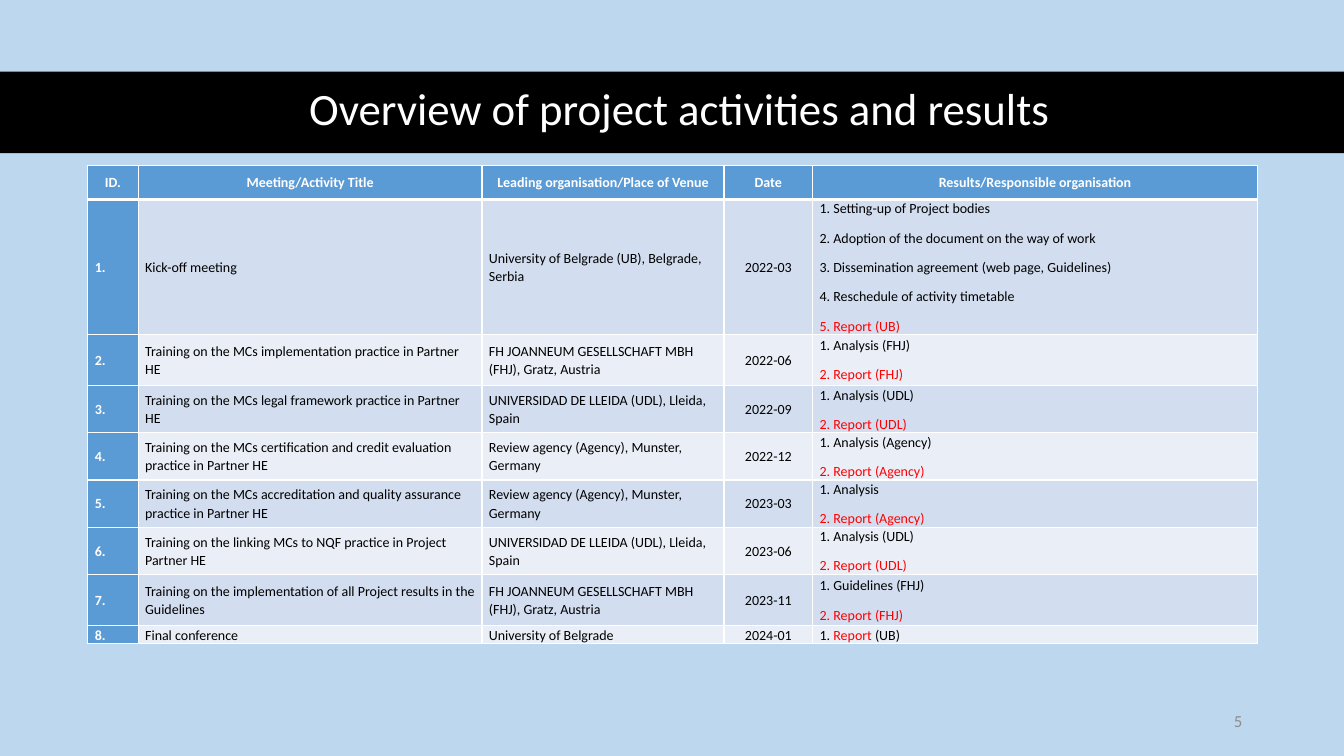
from dataclasses import dataclass
from typing import NamedTuple

from lxml.etree import SubElement
from pptx import Presentation
from pptx.dml.color import RGBColor
from pptx.enum.shapes import MSO_SHAPE
from pptx.enum.text import MSO_ANCHOR, MSO_AUTO_SIZE, PP_ALIGN
from pptx.oxml.ns import qn
from pptx.slide import Slide
from pptx.table import _Cell
from pptx.text.text import _Paragraph
from pptx.util import Inches, Pt

SKY = RGBColor(0xBD, 0xD7, 0xEE)
BLACK = RGBColor(0, 0, 0)
WHITE = RGBColor(0xFF, 0xFF, 0xFF)
GREY = RGBColor(0x8C, 0x8C, 0x8C)
RED = RGBColor(0xFF, 0, 0)
BLUE = RGBColor(0x5B, 0x9B, 0xD5)
BANDS = (RGBColor(0xD2, 0xDE, 0xEF), RGBColor(0xEA, 0xEF, 0xF7))
FONT = "Calibri"


class Part(NamedTuple):
    text: str
    color: RGBColor = BLACK


Line = list[Part]


@dataclass
class Step:
    title: str
    venue: str
    date: str
    results: list[Line]
    height: float


def tasks(*names: str) -> list[Line]:
    """Number the results; the closing report is red."""
    last = len(names)
    return [[Part(f"{num}. {name}", RED if num == last else BLACK)]
            for num, name in enumerate(names, 1)]


# Table content
HEADS = ["ID.", "Meeting/Activity Title", "Leading organisation/Place of Venue",
         "Date", "Results/Responsible organisation"]
WIDTHS = [0.5, 3.41, 2.4, 0.88, 4.41]
HEAD_H = 0.34
DATE_COL = 3
FHJ = "FH JOANNEUM GESELLSCHAFT MBH (FHJ), Gratz, Austria"
UDL = "UNIVERSIDAD DE LLEIDA (UDL), Lleida, Spain"
AGENCY = "Review agency (Agency), Munster, Germany"
STEPS = [
    Step("Kick-off meeting", "University of Belgrade (UB), Belgrade, Serbia", "2022-03",
         tasks("Setting-up of Project bodies",
               "Adoption of the document on the way of work",
               "Dissemination agreement (web page, Guidelines)",
               "Reschedule of activity timetable", "Report (UB)"), 1.25),
    Step("Training on the MCs implementation practice in Partner HE", FHJ, "2022-06",
         tasks("Analysis (FHJ)", "Report (FHJ)"), 0.51),
    Step("Training on the MCs legal framework practice in Partner HE", UDL, "2022-09",
         tasks("Analysis (UDL)", "Report (UDL)"), 0.44),
    Step("Training on the MCs certification and credit evaluation practice in Partner HE",
         AGENCY, "2022-12", tasks("Analysis (Agency)", "Report (Agency)"), 0.44),
    Step("Training on the MCs accreditation and quality assurance practice in Partner HE",
         AGENCY, "2023-03", tasks("Analysis", "Report (Agency)"), 0.44),
    Step("Training on the linking MCs to NQF practice in Project Partner HE", UDL, "2023-06",
         tasks("Analysis (UDL)", "Report (UDL)"), 0.44),
    Step("Training on the implementation of all Project results in the Guidelines",
         FHJ, "2023-11", tasks("Guidelines (FHJ)", "Report (FHJ)"), 0.51),
    Step("Final conference", "University of Belgrade", "2024-01",
         [[Part("1. "), Part("Report", RED), Part(" (UB)")]], 0.17),
]


def add_run(para: _Paragraph, part: Part, size: float, bold: bool = False) -> None:
    run = para.add_run()
    run.text = part.text
    font = run.font
    font.name, font.size, font.bold = FONT, Pt(size), bold
    font.color.rgb = part.color


def add_edges(cell: _Cell, base: float) -> None:
    """Draw white cell borders, with the given width below."""
    props = cell._tc.get_or_add_tcPr()
    for spot, (side, width) in enumerate(zip("LRTB", (1, 1, 1, base))):
        edge = SubElement(props, qn(f"a:ln{side}"), w=str(Pt(width)))
        fill = SubElement(edge, qn("a:solidFill"))
        SubElement(fill, qn("a:srgbClr"), val=str(WHITE))
        props.insert(spot, edge)


def fill_cell(cell: _Cell, lines: list[Line], color: RGBColor, align: PP_ALIGN,
              bold: bool = False, base: float = 1) -> None:
    cell.fill.solid()
    cell.fill.fore_color.rgb = color
    add_edges(cell, base)
    cell.vertical_anchor = MSO_ANCHOR.MIDDLE
    cell.margin_left = cell.margin_right = Inches(0.07)
    cell.margin_top = cell.margin_bottom = 0
    frame = cell.text_frame
    for num, line in enumerate(lines):
        para = frame.add_paragraph() if num else frame.paragraphs[0]
        para.alignment = align
        para.line_spacing = 1.07
        para.space_after = Pt(8)
        for part in line:
            add_run(para, part, 10, bold)


def add_title(slide: Slide) -> None:
    title = slide.shapes.title
    title.left, title.top = Inches(0.61), Inches(0.7)
    title.width, title.height = Inches(12.26), Inches(0.81)
    frame = title.text_frame
    frame.auto_size = MSO_AUTO_SIZE.NONE
    frame.vertical_anchor = MSO_ANCHOR.MIDDLE
    para = frame.paragraphs[0]
    para.alignment = PP_ALIGN.CENTER
    para.line_spacing = 0.9
    add_run(para, Part("Overview of project activities and results", WHITE), 32)

    # Black band behind the title
    band = slide.shapes.add_shape(MSO_SHAPE.RECTANGLE, 0, Inches(0.71),
                                  Inches(13.33), Inches(0.81))
    band.shadow.inherit = False
    band.fill.solid()
    band.fill.fore_color.rgb = BLACK
    band.line.fill.background()
    title.element.addprevious(band.element)


def add_page(slide: Slide) -> None:
    box = slide.shapes.add_textbox(Inches(9.42), Inches(6.95), Inches(3), Inches(0.4))
    frame = box.text_frame
    frame.word_wrap = True
    frame.vertical_anchor = MSO_ANCHOR.MIDDLE
    para = frame.paragraphs[0]
    para.alignment = PP_ALIGN.RIGHT
    para.space_after = Pt(6)
    add_run(para, Part("5", GREY), 12)


def add_plan(slide: Slide) -> None:
    table = slide.shapes.add_table(len(STEPS) + 1, len(HEADS), Inches(0.87), Inches(1.64),
                                   Inches(11.6), Inches(4.7)).table
    table.first_col = True
    for col, width in zip(table.columns, WIDTHS):
        col.width = Inches(width)

    # Header row
    table.rows[0].height = Inches(HEAD_H)
    for col, head in enumerate(HEADS):
        fill_cell(table.cell(0, col), [[Part(head, WHITE)]], BLUE,
                  PP_ALIGN.CENTER, bold=True, base=3)

    # Activity rows
    for row, step in enumerate(STEPS, 1):
        table.rows[row].height = Inches(step.height)
        fill_cell(table.cell(row, 0), [[Part(f"{row}.", WHITE)]], BLUE,
                  PP_ALIGN.LEFT, bold=True)
        cells = [[[Part(text)]] for text in (step.title, step.venue, step.date)]
        for col, lines in enumerate(cells + [step.results], 1):
            align = PP_ALIGN.CENTER if col == DATE_COL else PP_ALIGN.LEFT
            fill_cell(table.cell(row, col), lines, BANDS[(row - 1) % 2], align)


def main() -> None:
    deck = Presentation()
    deck.slide_width, deck.slide_height = Inches(13.33), Inches(7.5)
    slide = deck.slides.add_slide(deck.slide_layouts[5])
    slide.background.fill.solid()
    slide.background.fill.fore_color.rgb = SKY
    add_title(slide)
    add_page(slide)
    add_plan(slide)
    deck.save("out.pptx")


if __name__ == "__main__":
    main()
